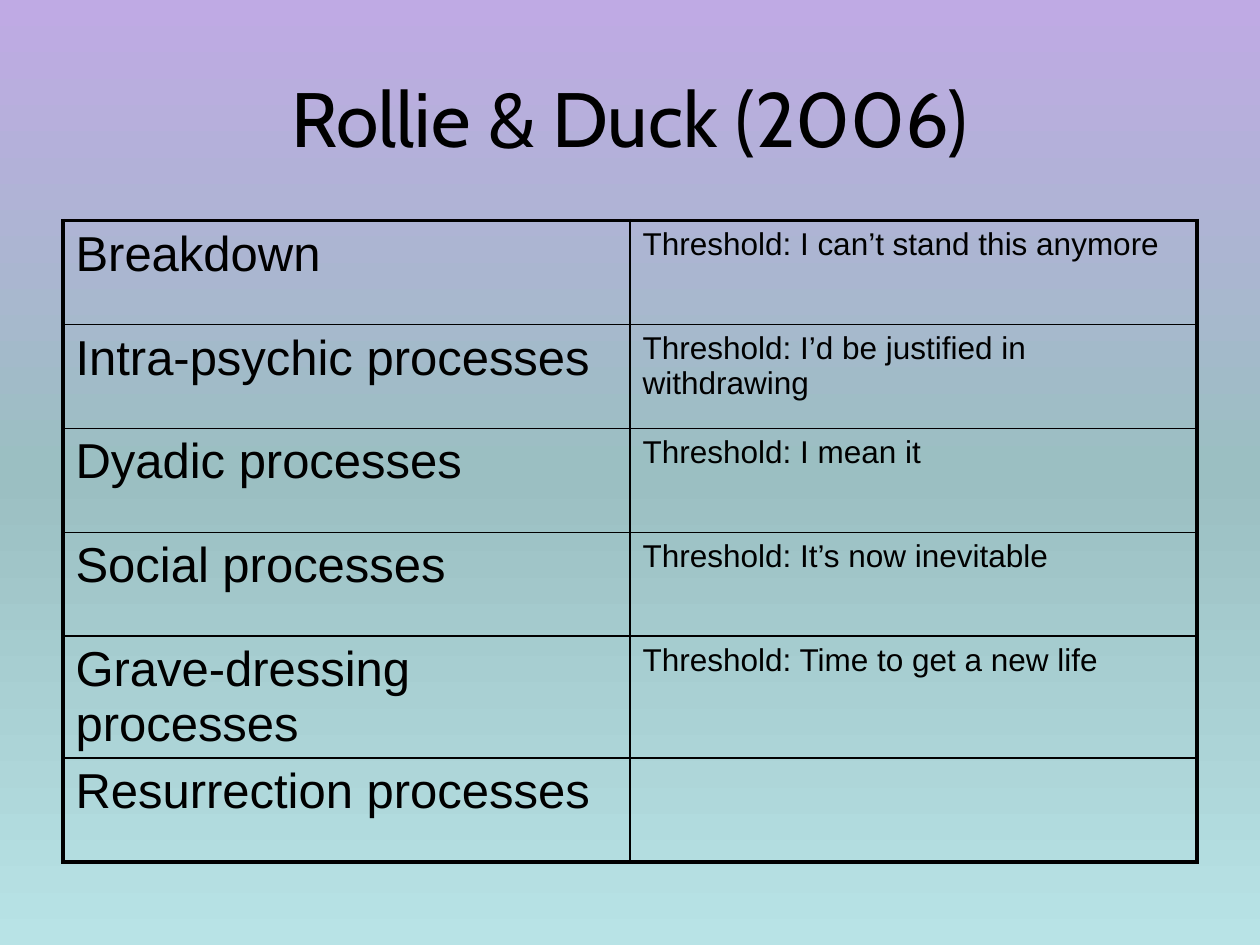
from copy import deepcopy

from lxml.etree import SubElement
from pptx import Presentation
from pptx.dml.color import RGBColor
from pptx.enum.text import MSO_ANCHOR, PP_ALIGN
from pptx.oxml.ns import qn
from pptx.util import Inches, Pt

COLOURS = {"top": "BFAAE4", "middle": "9BBFC2", "bottom": "B8E3E6", "ink": "000000"}
STAGES = [
    ("Breakdown", "Threshold: I can’t stand this anymore"),
    ("Intra-psychic processes", "Threshold: I’d be justified in withdrawing"),
    ("Dyadic processes", "Threshold: I mean it"),
    ("Social processes", "Threshold: It’s now inevitable"),
    ("Grave-dressing processes", "Threshold: Time to get a new life"),
    ("Resurrection processes", ""),
]
OUTER, INNER = 2.25, 1


def write(frame, text, size, font="Arial", align=PP_ALIGN.LEFT, before=0):
    """Put one formatted paragraph in a frame; before is a percentage of a line."""
    para = frame.paragraphs[0]
    para.alignment = align
    if before:
        spacing = SubElement(para._p.get_or_add_pPr(), qn("a:spcBef"))
        SubElement(spacing, qn("a:spcPct"), val=str(before * 1000))
    span = para.add_run()
    span.text = text
    span.font.name = font
    span.font.size = Pt(size)
    span.font.color.rgb = RGBColor.from_string(COLOURS["ink"])


def draw_borders(cell, **widths):
    """Line the sides of a cell, given as L, R, T and B in points."""
    properties = cell._tc.get_or_add_tcPr()
    for side, width in widths.items():
        line = SubElement(properties, qn(f"a:ln{side}"), w=str(Pt(width)))
        fill = SubElement(line, qn("a:solidFill"))
        SubElement(fill, qn("a:srgbClr"), val=COLOURS["ink"])


deck = Presentation()
deck.slide_width, deck.slide_height = Inches(10), Inches(7.5)
page = deck.slides.add_slide(deck.slide_layouts[5])
margin = int(deck.slide_width * 0.05)
content_width = deck.slide_width - 2 * margin

# Background: three colours from top to bottom
background = page.background.fill
background.gradient()
background.gradient_angle = 270
first_stop = background.gradient_stops[0]._gs
first_stop.addnext(deepcopy(first_stop))
for stop, name, position in zip(background.gradient_stops, ("top", "middle", "bottom"), (0, 0.5, 1)):
    stop.color.rgb = RGBColor.from_string(COLOURS[name])
    stop.position = position

# Title
title = page.shapes.title
title.left, title.top = margin, int(deck.slide_height * 0.04)
title.width, title.height = content_width, Inches(1.25)
title.text_frame.vertical_anchor = MSO_ANCHOR.MIDDLE
write(title.text_frame, "Rollie & Duck (2006)", 44, font="Cabin", align=PP_ALIGN.CENTER)

# Table of stages and thresholds
last_row, last_column = len(STAGES) - 1, 1
table = page.shapes.add_table(
    len(STAGES), 2, margin, Inches(1.75), content_width, Inches(4.95)
).table
table.first_row = table.horz_banding = False
for row, stage in enumerate(STAGES):
    for column, text in enumerate(stage):
        cell = table.cell(row, column)
        draw_borders(
            cell,
            L=OUTER if column == 0 else INNER,
            R=OUTER if column == last_column else INNER,
            T=OUTER if row == 0 else INNER,
            B=OUTER if row == last_row else INNER,
        )
        cell.fill.background()
        if text:
            write(cell.text_frame, text, 28 if column == 0 else 18, before=20)

deck.save("out.pptx")
